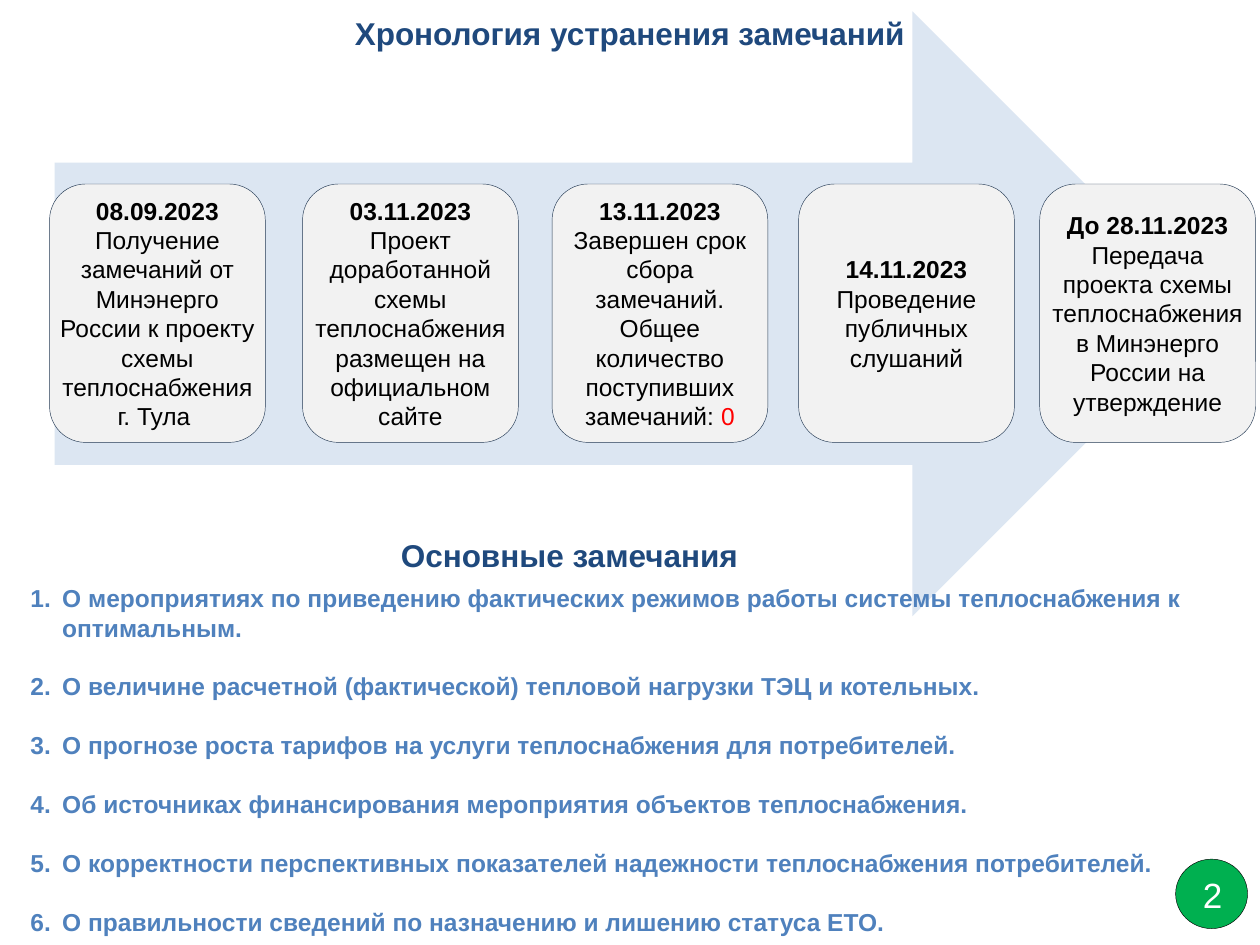
from pptx import Presentation
from pptx.dml.color import RGBColor
from pptx.enum.shapes import MSO_SHAPE as Shape
from pptx.enum.text import MSO_ANCHOR as Anchor, MSO_AUTO_SIZE as AutoSize, PP_ALIGN as Align
from pptx.oxml.xmlchemy import OxmlElement
from pptx.util import Cm, Pt

COLORS = {
    "heading": "1F497D", "list": "4F81BD", "arrow": "DCE6F2",
    "card": "F2F2F2", "card_line": "233953", "badge": "00B050",
    "black": "000000", "white": "FFFFFF", "red": "FF0000",
}
FORMATS = {
    "heading": {"size": Pt(18), "bold": True},
    "list": {"size": Pt(14), "bold": True},
    "date": {"size": Pt(14), "bold": True},
    "event": {"size": Pt(14), "bold": False},
    "number": {"size": Pt(20), "bold": False},
}

# Left edge, date, event, highlighted count
STAGES = [
    (1.0, "08.09.2023", "Получение замечаний от Минэнерго России к проекту схемы теплоснабжения г. Тула ", ""),
    (6.1, "03.11.2023", "Проект доработанной схемы теплоснабжения размещен на официальном сайте", ""),
    (11.13, "13.11.2023", "Завершен срок сбора замечаний. Общее количество поступивших замечаний: ", "0"),
    (16.1, "14.11.2023", "Проведение публичных слушаний", ""),
    (20.96, "До 28.11.2023", "Передача проекта схемы теплоснабжения в Минэнерго России на утверждение", ""),
]
REMARKS = [
    "О мероприятиях по приведению фактических режимов работы системы теплоснабжения к оптимальным.",
    "О величине расчетной (фактической) тепловой нагрузки ТЭЦ и котельных.",
    "О прогнозе роста тарифов на услуги теплоснабжения для потребителей.",
    "Об источниках финансирования мероприятия объектов теплоснабжения.",
    "О корректности перспективных показателей надежности теплоснабжения потребителей.",
    "О правильности сведений по назначению и лишению статуса ЕТО.",
]


class SlideBuilder:
    font = "Arial"

    def __init__(self, slide):
        self.slide = slide

    def color(self, name):
        return RGBColor.from_string(COLORS[name])

    def place(self, shape, box):
        for side, value in zip(("left", "top", "width", "height"), box):
            setattr(shape, side, Cm(value))

    def run(self, paragraph, text, style, color):
        run = paragraph.add_run()
        run.text = text
        run.font.name = self.font
        run.font.color.rgb = self.color(color)
        for key, value in FORMATS[style].items():
            setattr(run.font, key, value)

    def frame(self, shape, anchor, **settings):
        frame = shape.text_frame
        settings = {"word_wrap": True, "auto_size": AutoSize.NONE,
                    "vertical_anchor": anchor, **settings}
        for key, value in settings.items():
            setattr(frame, key, value)
        return frame

    def heading(self, shape, box, text):
        self.place(shape, box)
        paragraph = self.frame(shape, Anchor.TOP).paragraphs[0]
        paragraph.alignment = Align.CENTER
        paragraph.line_spacing = 1.2
        self.run(paragraph, text, "heading", "heading")

    def shape(self, kind, box, fill=None, line=None):
        shape = self.slide.shapes.add_shape(kind, *map(Cm, box))
        shape.shadow.inherit = False
        if fill:
            shape.fill.solid()
            shape.fill.fore_color.rgb = self.color(fill)
        else:
            shape.fill.background()
        if line:
            shape.line.color.rgb = self.color(line)
            shape.line.width = Pt(0.25)
        else:
            shape.line.fill.background()
        return shape

    def centred_text(self, shape, paragraphs, wrap=True):
        frame = self.frame(shape, Anchor.MIDDLE, word_wrap=wrap, margin_left=0,
                           margin_right=0, margin_top=0, margin_bottom=0)
        for index, runs in enumerate(paragraphs):
            paragraph = frame.add_paragraph() if index else frame.paragraphs[0]
            paragraph.alignment = Align.CENTER
            for text, style, color in runs:
                self.run(paragraph, text, style, color)

    def numbered_list(self, body, box, items):
        self.place(body, box)
        frame = self.frame(body, Anchor.TOP)
        for index, item in enumerate(items):
            paragraph = frame.add_paragraph() if index else frame.paragraphs[0]
            paragraph.space_before = Pt(16.8 if index else 0)
            self.run(paragraph, item, "list", "list")
            properties = paragraph._p.get_or_add_pPr()
            properties.set("marL", str(Cm(0.64)))
            properties.set("indent", str(-Cm(0.64)))
            numbering = OxmlElement("a:buAutoNum")
            numbering.set("type", "arabicPeriod")
            properties.append(numbering)
        # Bring the list in front of the arrow
        self.slide.shapes._spTree.append(body._element)


def main():
    deck = Presentation()
    deck.slide_width, deck.slide_height = Cm(25.4), Cm(19.05)
    slide = deck.slides.add_slide(deck.slide_layouts[1])
    builder = SlideBuilder(slide)
    title, remarks = slide.placeholders

    # Title
    builder.heading(title, (0, 0, 25.4, 1.7), "Хронология устранения замечаний")

    # Page number badge
    builder.shape(Shape.OVAL, (23.7, 17.32, 1.45, 1.4), "badge", "black")
    number = builder.shape(Shape.OVAL, (24.05, 17.63, 0.79, 0.81))
    builder.centred_text(number, [[("2", "number", "white")]], wrap=False)

    # Timeline arrow and stages
    builder.shape(Shape.RIGHT_ARROW, (1.1, 0.23, 23.39, 12.19), "arrow")
    for left, date, event, count in STAGES:
        card = builder.shape(Shape.ROUNDED_RECTANGLE, (left, 3.71, 4.35, 5.21),
                             "card", "card_line")
        details = [(event, "event", "black")]
        if count:
            details.append((count, "event", "red"))
        builder.centred_text(card, [[(date, "date", "black")], details])

    # Main remarks
    remarks_heading = slide.shapes.add_textbox(0, 0, 0, 0)
    builder.heading(remarks_heading, (0, 10.52, 22.96, 1.7), "Основные замечания")
    builder.numbered_list(remarks, (0.36, 11.63, 24.51, 7.4), REMARKS)

    deck.save("out.pptx")


if __name__ == "__main__":
    main()
